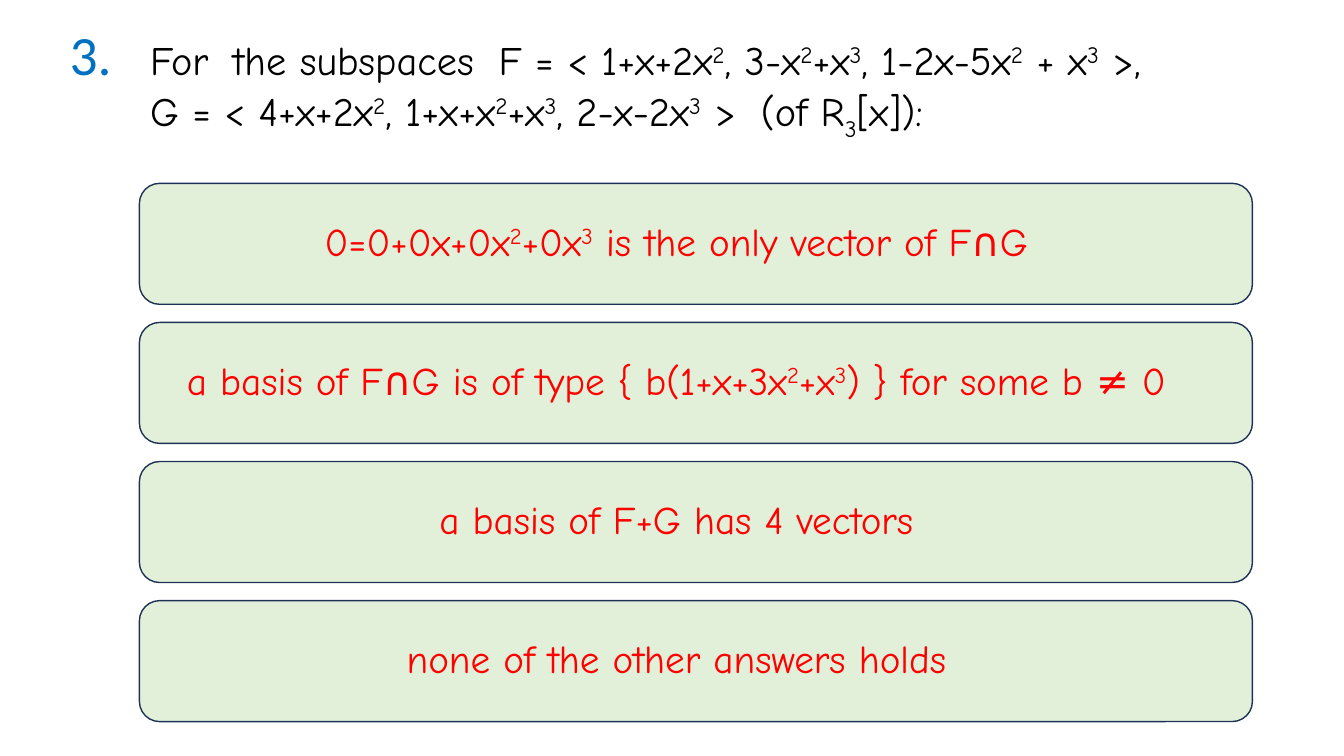
from dataclasses import dataclass

from lxml.etree import SubElement
from pptx import Presentation
from pptx.dml.color import RGBColor
from pptx.enum.shapes import MSO_SHAPE as Preset
from pptx.enum.text import MSO_ANCHOR as Anchor, MSO_AUTO_SIZE as AutoSize, PP_ALIGN as Align
from pptx.oxml.ns import qn
from pptx.util import Pt

# ^ raises the next character, _ lowers it, ~ widens the next space.
NUMBER = "3."
QUESTION = [
    "For~ the subspaces~ F = < 1+x+2x^2, 3-x^2+x^3, 1-2x-5x^2 + x^3 >,",
    "G = < 4+x+2x^2, 1+x+x^2+x^3, 2-x-2x^3 >~ (of R_3[x]):",
]
ANSWERS = [
    "0=0+0x+0x^2+0x^3 is the only vector of F∩G",
    "a basis of F∩G is of type { b(1+x+3x^2+x^3) } for some b ≠ 0",
    "a basis of F+G has 4 vectors",
    "none of the other answers holds",
]
MARKS = {"^": ("baseline", "30000"), "_": ("baseline", "-25000"), "~": ("spc", "800")}


@dataclass(frozen=True)
class Theme:
    number_color: RGBColor = RGBColor(0x00, 0x70, 0xC0)
    question_color: RGBColor = RGBColor(0x00, 0x00, 0x00)
    answer_color: RGBColor = RGBColor(0xFF, 0x00, 0x00)
    box_fill: RGBColor = RGBColor(0xE2, 0xF0, 0xD9)
    box_line: RGBColor = RGBColor(0x1E, 0x32, 0x56)
    number_size: float = 39.6
    question_size: float = 28.8
    answer_size: float = 28
    number_font: str = "Calibri"
    text_font: str = "Comic Neue"


THEME = Theme()
NUMBER_STYLE = (THEME.number_font, THEME.number_size, THEME.number_color)
QUESTION_STYLE = (THEME.text_font, THEME.question_size, THEME.question_color)
ANSWER_STYLE = (THEME.text_font, THEME.answer_size, THEME.answer_color)

TITLE_BOX = (42.5, 6.5, 863.3, 104.4)
TITLE_INDENT = 57.5
ANSWER_LEFT, ANSWER_TOP = 99.6, 131
ANSWER_WIDTH, ANSWER_HEIGHT = 795, 86.4
ANSWER_PITCH = 99.35


def set_all(target, values):
    for name, value in values.items():
        setattr(target, name, value)


def add_run(paragraph, text, style):
    name, size, color = style
    run = paragraph.add_run()
    run.text = text
    set_all(run.font, {"name": name, "size": Pt(size), "bold": False})
    run.font.color.rgb = color
    return run


def add_marked_text(paragraph, text, style):
    """Add runs, applying each mark to the single character after it."""
    plain = ""
    characters = iter(text)
    for character in characters:
        if character in MARKS:
            add_run(paragraph, plain, style)
            run = add_run(paragraph, next(characters), style)
            run.font._element.set(*MARKS[character])
            plain = ""
        else:
            plain += character
    if plain:
        add_run(paragraph, plain, style)


def fill_title(title):
    box = zip(("left", "top", "width", "height"), map(Pt, TITLE_BOX))
    set_all(title, dict(box))
    set_all(title.text_frame, {
        "word_wrap": True, "auto_size": AutoSize.NONE, "vertical_anchor": Anchor.MIDDLE,
    })
    paragraph = title.text_frame.paragraphs[0]
    set_all(paragraph, {"alignment": Align.LEFT, "line_spacing": 0.9})
    properties = paragraph._p.get_or_add_pPr()
    properties.set("marL", str(Pt(TITLE_INDENT)))
    properties.set("indent", str(-Pt(TITLE_INDENT)))

    add_run(paragraph, NUMBER + "\t", NUMBER_STYLE)
    first, second = QUESTION
    add_marked_text(paragraph, first, QUESTION_STYLE)
    paragraph.add_line_break()
    line_break = paragraph._p.findall(qn("a:br"))[-1]
    SubElement(line_break, qn("a:rPr"), sz=str(round(THEME.question_size * 100)))
    add_marked_text(paragraph, second, QUESTION_STYLE)


def add_answer(slide, index, text):
    top = ANSWER_TOP + index * ANSWER_PITCH
    box = slide.shapes.add_shape(
        Preset.ROUNDED_RECTANGLE,
        *map(Pt, (ANSWER_LEFT, top, ANSWER_WIDTH, ANSWER_HEIGHT)))
    box.shadow.inherit = False
    box.fill.solid()
    box.fill.fore_color.rgb = THEME.box_fill
    box.line.color.rgb = THEME.box_line
    box.line.width = Pt(1)
    set_all(box.text_frame, {
        "word_wrap": True, "vertical_anchor": Anchor.MIDDLE, "margin_right": Pt(35),
    })
    paragraph = box.text_frame.paragraphs[0]
    set_all(paragraph, {
        "alignment": Align.CENTER, "line_spacing": 0.9, "space_before": Pt(10),
    })
    add_marked_text(paragraph, text, ANSWER_STYLE)


def main():
    presentation = Presentation()
    set_all(presentation, {"slide_width": Pt(960), "slide_height": Pt(540)})
    title_only = presentation.slide_layouts[5]
    slide = presentation.slides.add_slide(title_only)
    fill_title(slide.shapes.title)
    for index, text in enumerate(ANSWERS):
        add_answer(slide, index, text)
    presentation.save("out.pptx")


if __name__ == "__main__":
    main()
